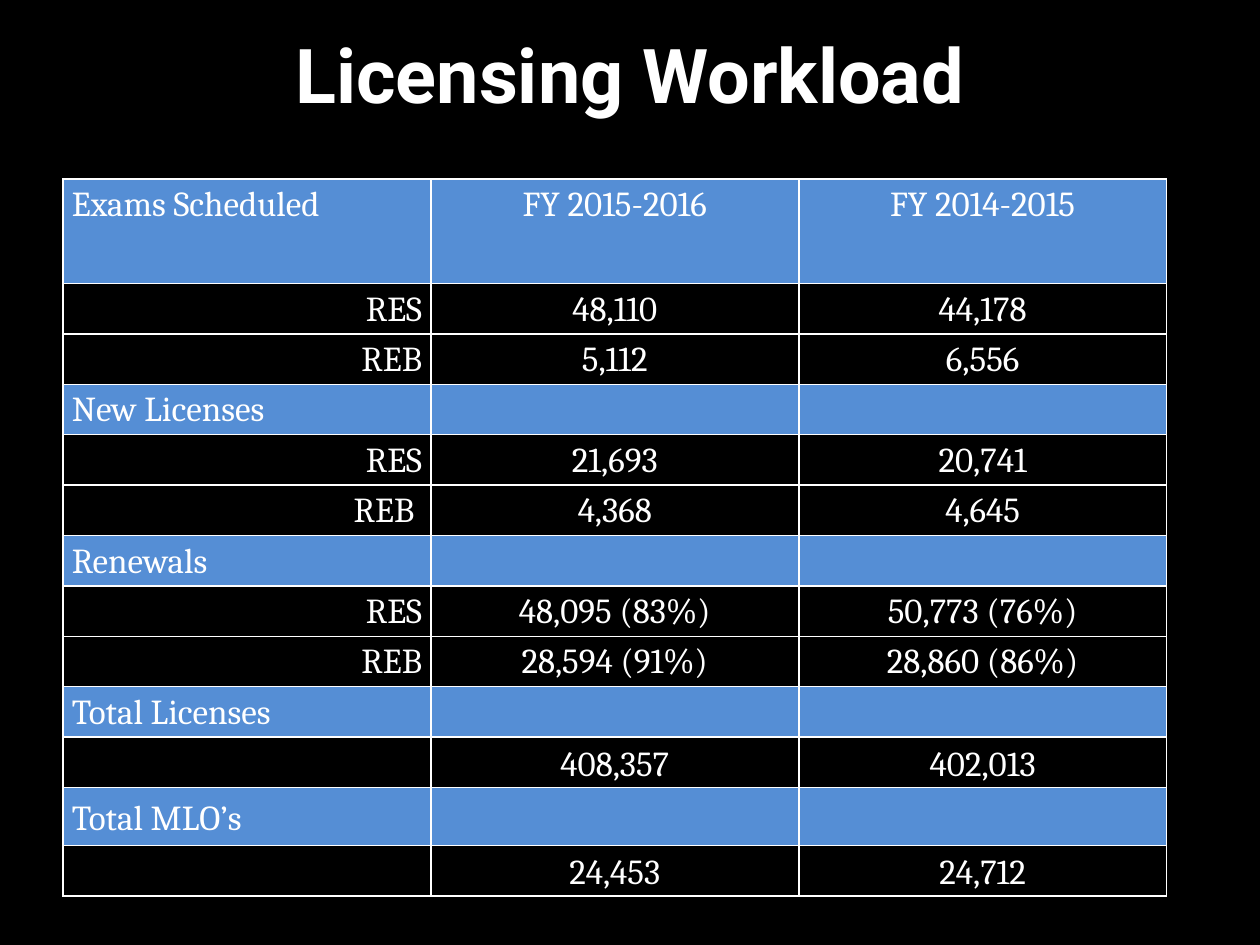
from lxml.etree import SubElement
from pptx import Presentation
from pptx.dml.color import RGBColor
from pptx.enum.text import MSO_ANCHOR as Anchor, PP_ALIGN as Align
from pptx.oxml.ns import qn
from pptx.util import Inches, Pt

BLACK = RGBColor(0x00, 0x00, 0x00)
WHITE = RGBColor(0xFF, 0xFF, 0xFF)
BLUE = RGBColor(0x55, 0x8E, 0xD5)

ROWS = [
    ("Exams Scheduled", "FY 2015-2016", "FY 2014-2015"),
    ("RES", "48,110", "44,178"),
    ("REB", "5,112", "6,556"),
    ("New Licenses", "", ""),
    ("RES", "21,693", "20,741"),
    ("REB ", "4,368", "4,645"),
    ("Renewals", "", ""),
    ("RES", "48,095 (83%)", "50,773 (76%)"),
    ("REB", "28,594 (91%)", "28,860 (86%)"),
    ("Total Licenses", "", ""),
    ("", "408,357", "402,013"),
    ("Total MLO’s", "", ""),
    ("", "24,453", "24,712"),
]
SECTION_ROWS = {0, 3, 6, 9, 11}
FIRST_MIDDLE_ROW = 10
ROW_HEIGHT = 0.4
SPECIAL_HEIGHTS = {0: 0.83, 11: 0.46}


def add_borders(cell):
    """Draw a thin white line on all four sides of a cell."""
    properties = cell._tc.get_or_add_tcPr()
    for position, side in enumerate(("a:lnL", "a:lnR", "a:lnT", "a:lnB")):
        line = properties.makeelement(qn(side), {"w": str(Pt(1))})
        fill = SubElement(line, qn("a:solidFill"))
        SubElement(fill, qn("a:srgbClr"), val=str(WHITE))
        properties.insert(position, line)


presentation = Presentation()
presentation.slide_width = Inches(10)
presentation.slide_height = Inches(7.5)
slide = presentation.slides.add_slide(presentation.slide_layouts[5])
slide.background.fill.solid()
slide.background.fill.fore_color.rgb = BLACK

# Title
title = slide.shapes.title
title.left, title.top = Inches(0.5), Inches(0.17)
title.width, title.height = Inches(9), Inches(0.83)
title.text_frame.text = "Licensing Workload"
title.text_frame.vertical_anchor = Anchor.MIDDLE
paragraph = title.text_frame.paragraphs[0]
paragraph.alignment = Align.CENTER
paragraph.font.name = "Roboto"
paragraph.font.size = Pt(43.2)
paragraph.font.bold = True
paragraph.font.color.rgb = WHITE

# Workload table
table = slide.shapes.add_table(
    len(ROWS), 3, Inches(0.5), Inches(1.42), Inches(8.75), Inches(5.65)
).table
table.first_row = False
table.horz_banding = False
for column in table.columns:
    column.width = Inches(2.92)

for row_index, texts in enumerate(ROWS):
    is_section = row_index in SECTION_ROWS
    height = SPECIAL_HEIGHTS.get(row_index, ROW_HEIGHT)
    table.rows[row_index].height = Inches(height)
    for column_index, text in enumerate(texts):
        cell = table.cell(row_index, column_index)
        cell.text = text
        cell.margin_left = cell.margin_right = Inches(0.07)
        cell.margin_top = cell.margin_bottom = 0
        if row_index >= FIRST_MIDDLE_ROW:
            cell.vertical_anchor = Anchor.MIDDLE
        if is_section:
            cell.fill.solid()
            cell.fill.fore_color.rgb = BLUE
        else:
            cell.fill.background()
        add_borders(cell)

        paragraph = cell.text_frame.paragraphs[0]
        if column_index > 0:
            paragraph.alignment = Align.CENTER
        else:
            paragraph.alignment = Align.LEFT if is_section else Align.RIGHT
        paragraph.line_spacing = 1.15
        paragraph.font.name = "Cambria"
        paragraph.font.size = Pt(20)
        paragraph.font.color.rgb = WHITE

presentation.save("out.pptx")
